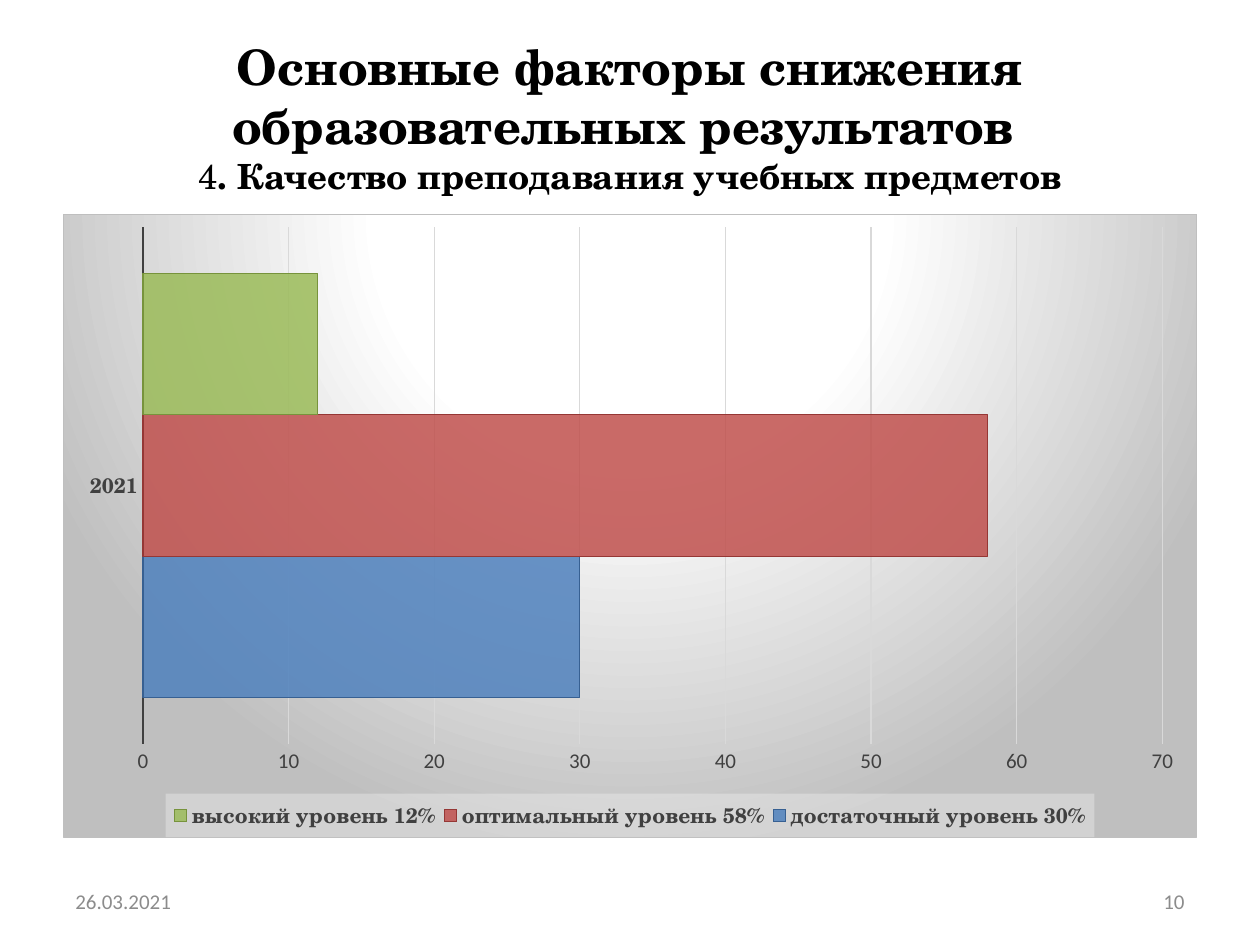
from dataclasses import dataclass

from pptx import Presentation
from pptx.chart.data import CategoryChartData
from pptx.dml.color import RGBColor
from pptx.enum.chart import XL_CHART_TYPE, XL_LEGEND_POSITION, XL_TICK_MARK
from pptx.enum.text import MSO_ANCHOR, PP_ALIGN
from pptx.oxml import parse_xml
from pptx.oxml.ns import nsdecls, qn
from pptx.util import Inches, Pt

BAR = XL_CHART_TYPE.BAR_CLUSTERED
BOTTOM = XL_LEGEND_POSITION.BOTTOM
NO_TICK = XL_TICK_MARK.NONE
MIDDLE = MSO_ANCHOR.MIDDLE
LEFT, CENTER, RIGHT = PP_ALIGN.LEFT, PP_ALIGN.CENTER, PP_ALIGN.RIGHT


@dataclass(frozen=True)
class Theme:
    heading_font: str = "TeX Gyre Schola"
    body_font: str = "Calibri"
    title_size: float = 27.9
    subtitle_size: float = 19.8
    label_size: float = 12
    black: str = "000000"
    white: str = "FFFFFF"
    label: str = "404040"
    footer: str = "8C8C8C"
    grid: str = "D9D9D9"
    frame: str = "BFBFBF"
    legend_fill: str = "F2F2F2"
    thin_line: float = 0.75
    axis_line: float = 1.5


THEME = Theme()
TITLE = "Основные факторы снижения образовательных результатов "
SUBTITLE = [("4", False), (". Качество преподавания учебных предметов", True)]
LEVELS = [
    ("достаточный уровень 30%", 30, "4F81BD", "376092"),
    ("оптимальный уровень 58%", 58, "C0504D", "953735"),
    ("высокий уровень 12%", 12, "9BBB59", "77933C"),
]


def style_font(font, color, **values):
    for name, value in values.items():
        setattr(font, name, value)
    font.color.rgb = RGBColor.from_string(color)


def style_line(line, color, width):
    line.color.rgb = RGBColor.from_string(color)
    line.width = Pt(width)


def add_text_box(page, place, align):
    box = page.shapes.add_textbox(*map(Inches, place))
    frame = box.text_frame
    frame.word_wrap = True
    frame.vertical_anchor = MIDDLE
    para = frame.paragraphs[0]
    para.alignment = align
    return para


def add_span(para, text, color, **values):
    span = para.add_run()
    span.text = text
    style_font(span.font, color, **values)


def add_title(page):
    para = add_text_box(page, (0.5, 0.3, 9, 1.25), CENTER)
    add_span(para, TITLE, THEME.black, name=THEME.heading_font,
             size=Pt(THEME.title_size), bold=True)
    para.add_line_break()
    for text, bold in SUBTITLE:
        add_span(para, text, THEME.black, name=THEME.heading_font,
                 size=Pt(THEME.subtitle_size), bold=bold)


def add_footer(page, left, text, align):
    para = add_text_box(page, (left, 6.95, 2.33, 0.4), align)
    add_span(para, text, THEME.footer, name=THEME.body_font, size=Pt(THEME.label_size))


def set_layout(parent, index, target, **shares):
    for old in parent.findall(qn("c:layout")):
        parent.remove(old)
    modes = '<c:xMode val="edge"/><c:yMode val="edge"/>'
    sizes = "".join(f'<c:{name} val="{share}"/>' for name, share in shares.items())
    parent.insert(index, parse_xml(
        f'<c:layout {nsdecls("c")}><c:manualLayout>{target}{modes}{sizes}'
        '</c:manualLayout></c:layout>'))


def fill_background(chart):
    stops = "".join(
        f'<a:gs pos="{place * 1000}"><a:srgbClr val="{color}"/></a:gs>'
        for place, color in ((0, THEME.white), (39, THEME.white), (100, THEME.frame)))
    chart.element.find(qn("c:chart")).addnext(parse_xml(
        f'<c:spPr {nsdecls("c", "a")}><a:gradFill><a:gsLst>{stops}</a:gsLst>'
        '<a:path path="circle">'
        '<a:fillToRect l="50000" t="-80000" r="50000" b="180000"/></a:path></a:gradFill>'
        f'<a:ln w="{Pt(THEME.thin_line)}"><a:solidFill><a:srgbClr val="{THEME.frame}"/>'
        '</a:solidFill></a:ln></c:spPr>'))


def style_series(series, fill_color, line_color):
    fill = series.format.fill
    fill.solid()
    fill.fore_color.rgb = RGBColor.from_string(fill_color)
    color = series.format.element.find(".//" + qn("a:srgbClr")) if hasattr(
        series.format, "element") else series.element.find(".//" + qn("a:srgbClr"))
    color.append(parse_xml(f'<a:alpha {nsdecls("a")} val="85000"/>'))
    style_line(series.format.line, line_color, THEME.thin_line)


def style_axes(chart, heading):
    categories, values = chart.category_axis, chart.value_axis
    for axis in (categories, values):
        axis.major_tick_mark = axis.minor_tick_mark = NO_TICK
    style_font(categories.tick_labels.font, THEME.label, **heading)
    style_line(categories.format.line, THEME.label, THEME.axis_line)
    style_font(values.tick_labels.font, THEME.label, name=THEME.body_font,
               size=Pt(THEME.label_size), bold=False)
    scale = {"minimum_scale": 0, "maximum_scale": 70, "major_unit": 10,
             "has_major_gridlines": True}
    for name, value in scale.items():
        setattr(values, name, value)
    values.format.line.fill.background()
    style_line(values.major_gridlines.format.line, THEME.grid, THEME.thin_line)


def style_legend(chart, heading):
    chart.has_legend = True
    chart.legend.position = BOTTOM
    chart.legend.include_in_layout = False
    style_font(chart.legend.font, THEME.label, **heading)
    legend = chart.element.find(".//" + qn("c:legend"))
    set_layout(legend, 1, "", x=0.09, y=0.93, w=0.82, h=0.07)
    legend.find(qn("c:overlay")).addnext(parse_xml(
        f'<c:spPr {nsdecls("c", "a")}><a:solidFill><a:srgbClr val="{THEME.legend_fill}">'
        '<a:alpha val="39000"/></a:srgbClr></a:solidFill></c:spPr>'))


def add_level_chart(page):
    chart_data = CategoryChartData()
    chart_data.categories = ["2021"]
    for name, share, *_ in LEVELS:
        chart_data.add_series(name, [share])
    place = map(Inches, (0.5, 1.7, 9, 4.95))
    chart = page.shapes.add_chart(BAR, *place, chart_data).chart
    chart.has_title = False
    style_font(chart.font, THEME.black, name=THEME.body_font, size=Pt(10))
    plot = chart.plots[0]
    for name, value in {"gap_width": 65, "overlap": 0, "vary_by_categories": False}.items():
        setattr(plot, name, value)
    for series, (_, _, fill_color, line_color) in zip(plot.series, LEVELS):
        style_series(series, fill_color, line_color)
    heading = {"name": THEME.heading_font, "size": Pt(THEME.label_size), "bold": True}
    style_axes(chart, heading)
    style_legend(chart, heading)
    set_layout(chart.element.find(".//" + qn("c:plotArea")), 0,
               '<c:layoutTarget val="inner"/>', x=0.07, y=0.02, w=0.9, h=0.83)
    fill_background(chart)


def main():
    deck = Presentation()
    deck.slide_width, deck.slide_height = Inches(10), Inches(7.5)
    page = deck.slides.add_slide(deck.slide_layouts[6])
    add_title(page)
    add_level_chart(page)
    add_footer(page, 7.17, "10", RIGHT)
    add_footer(page, 0.5, "26.03.2021", LEFT)
    deck.save("out.pptx")


if __name__ == "__main__":
    main()
